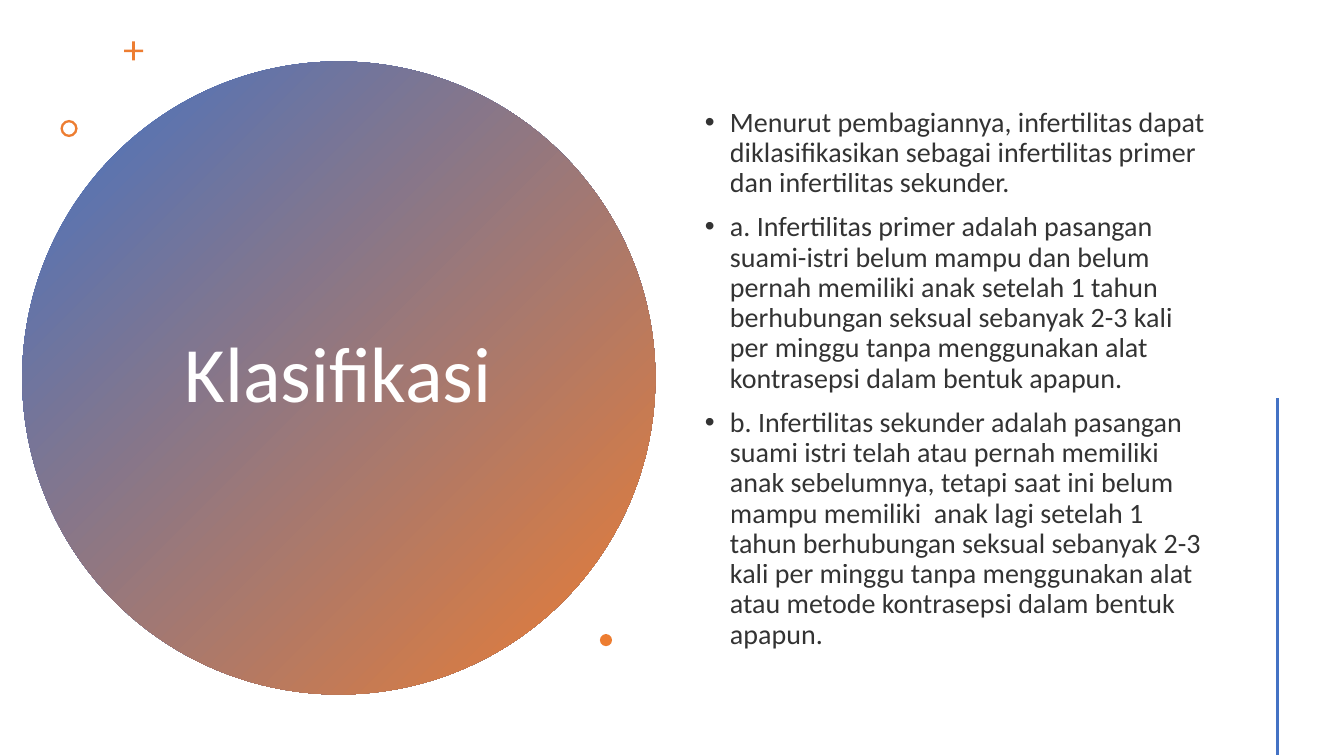
from lxml.etree import SubElement
from pptx import Presentation
from pptx.dml.color import RGBColor
from pptx.enum.shapes import MSO_CONNECTOR, MSO_SHAPE
from pptx.enum.text import MSO_ANCHOR, MSO_AUTO_SIZE, PP_ALIGN
from pptx.oxml.ns import qn
from pptx.util import Inches, Pt

BLUE, ORANGE, WHITE, BLACK = "4472C4", "ED7D31", "FFFFFF", "000000"
POINTS = [
    "Menurut pembagiannya, infertilitas dapat diklasifikasikan sebagai infertilitas primer dan infertilitas sekunder.",
    "a. Infertilitas primer adalah pasangan suami-istri belum mampu dan belum pernah memiliki anak setelah 1 tahun "
    "berhubungan seksual sebanyak 2-3 kali per minggu tanpa menggunakan alat kontrasepsi dalam bentuk apapun.",
    "b. Infertilitas sekunder adalah pasangan suami istri telah atau pernah memiliki anak sebelumnya, tetapi saat ini "
    "belum mampu memiliki  anak lagi setelah 1 tahun berhubungan seksual sebanyak 2-3 kali per minggu tanpa "
    "menggunakan alat atau metode kontrasepsi dalam bentuk apapun.",
]


def color(value):
    return RGBColor.from_string(value)


def fill_placeholder(placeholder, box, texts, size, text_color, paragraph_format):
    placeholder.left, placeholder.top, placeholder.width, placeholder.height = map(Inches, box)
    frame = placeholder.text_frame
    frame_format = {"word_wrap": True, "auto_size": MSO_AUTO_SIZE.NONE, "vertical_anchor": MSO_ANCHOR.MIDDLE}
    for name, value in frame_format.items():
        setattr(frame, name, value)
    frame.text = "\n".join(texts)
    for paragraph in frame.paragraphs:
        for name, value in paragraph_format.items():
            setattr(paragraph, name, value)
        font = paragraph.runs[0].font
        for name, value in {"name": "Calibri", "size": Pt(size)}.items():
            setattr(font, name, value)
        font.color.rgb = color(text_color)


presentation = Presentation()
presentation.slide_width = Inches(13.33)
presentation.slide_height = Inches(7.5)
slide = presentation.slides.add_slide(presentation.slide_layouts[1])
shapes = slide.shapes
title, body = slide.placeholders

circle = shapes.add_shape(MSO_SHAPE.OVAL, Inches(0.22), Inches(0.61), Inches(6.28), Inches(6.28))
circle.shadow.inherit = False
circle.line.fill.background()
circle.fill.gradient()
circle.fill.gradient_angle = 315
for stop, position, value in zip(circle.fill.gradient_stops, (0, 1), (BLUE, ORANGE)):
    stop.position = position
    stop.color.rgb = color(value)
title._element.addprevious(circle._element)

fill_placeholder(title, (1.36, 1.41, 3.99, 4.67), ["Klasifikasi"], 56, WHITE,
                 {"alignment": PP_ALIGN.CENTER, "line_spacing": 0.9})
fill_placeholder(body, (6.89, 0.57, 5.22, 6.38), POINTS, 20, BLACK,
                 {"line_spacing": 0.9, "space_before": Pt(10)})
for paragraph in body.text_frame.paragraphs:
    properties = paragraph._p.get_or_add_pPr()
    properties.set("marL", str(Inches(0.25)))
    properties.set("indent", str(Inches(-0.25)))
    SubElement(properties, qn("a:buChar"), char="•")
    for text_color in paragraph._p.iter(qn("a:srgbClr")):
        SubElement(text_color, qn("a:alpha"), val="80000")

accents = [
    (MSO_SHAPE.CROSS, 1.23, 0.41, 0.19, 0.43),
    (MSO_SHAPE.DONUT, 0.6, 1.19, 0.17, 0.14),
    (MSO_SHAPE.OVAL, 5.95, 6.29, 0.12, None),
]
for kind, left, top, size, adjustment in accents:
    accent = shapes.add_shape(kind, Inches(left), Inches(top), Inches(size), Inches(size))
    accent.shadow.inherit = False
    accent.fill.solid()
    accent.fill.fore_color.rgb = color(ORANGE)
    accent.line.fill.background()
    if adjustment:
        accent.adjustments[0] = adjustment

side_line = shapes.add_connector(MSO_CONNECTOR.STRAIGHT, Inches(12.67), Inches(3.95), Inches(12.67), Inches(7.49))
side_line.line.color.rgb = color(BLUE)
side_line.line.width = Pt(2)
SubElement(side_line._element.spPr, qn("a:effectLst"))

presentation.save("out.pptx")
